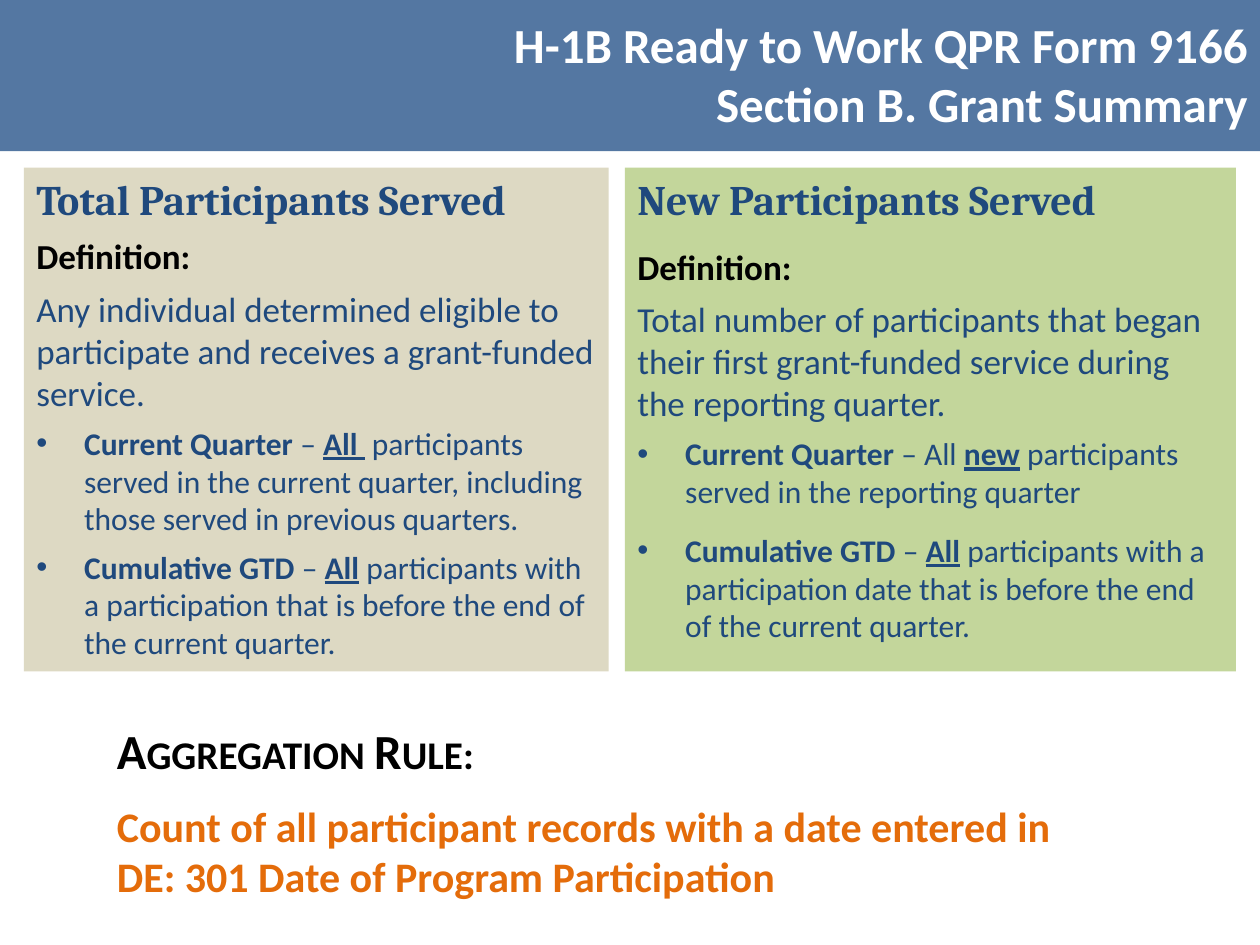
from lxml.etree import SubElement as Sub
from pptx import Presentation
from pptx.dml.color import RGBColor as Rgb
from pptx.enum.shapes import MSO_SHAPE as Shape
from pptx.enum.text import MSO_ANCHOR as Anchor, PP_ALIGN as Align
from pptx.oxml.ns import qn
from pptx.util import Inches, Pt

COLS, ROWS = 100, 75
HUES = {"band": "376092", "sand": "DDD9C3", "leaf": "C3D69B", "navy": "1F497D",
        "black": "000000", "white": "FFFFFF", "orange": "E46C0A"}
BASE = {"name": "Calibri", "bold": True}
STYLES = {
    "title": {**BASE, "size": 28, "hue": "white"},
    "head": {**BASE, "name": "Cambria", "size": 24, "hue": "navy"},
    "label": {**BASE, "size": 20, "hue": "black"},
    "body": {**BASE, "size": 20, "hue": "navy", "bold": False},
    "item": {**BASE, "size": 18, "hue": "navy", "bold": False},
    "term": {**BASE, "size": 18, "hue": "navy"},
    "stress": {**BASE, "size": 18, "hue": "navy", "underline": True},
    "rule": {**BASE, "size": 28, "hue": "black", "caps": "small"},
    "count": {**BASE, "size": 24, "hue": "orange"},
}


class Page:
    def __init__(self):
        self.deck = Presentation()
        self.deck.slide_width, self.deck.slide_height = Inches(10), Inches(7.5)
        self.slide = self.deck.slides.add_slide(self.deck.slide_layouts[6])

    def place(self, x, y, w, h):
        """Turn grid columns and rows into lengths."""
        dx, dy = self.deck.slide_width / COLS, self.deck.slide_height / ROWS
        return [round(n) for n in (x * dx, y * dy, w * dx, h * dy)]

    def block(self, box, hue, alpha=100):
        shape = self.slide.shapes.add_shape(Shape.RECTANGLE, *self.place(*box))
        shape.shadow.inherit = False
        shape.fill.solid()
        shape.fill.fore_color.rgb = Rgb.from_string(HUES[hue])
        shape.line.fill.background()
        if alpha < 100:
            tint = shape.fill._xPr.find(".//" + qn("a:srgbClr"))
            Sub(tint, qn("a:alpha"), val=str(alpha * 1000))
        return shape

    def text(self, box, paras, **kw):
        shape = self.slide.shapes.add_textbox(*self.place(*box))
        self.fill(shape.text_frame, paras, **kw)

    def panel(self, box, hue, paras):
        self.fill(self.block(box, hue).text_frame, paras)

    def fill(self, frame, paras, align=Align.LEFT, anchor=Anchor.TOP):
        frame.word_wrap = True
        frame.vertical_anchor = anchor
        for i, (runs, after) in enumerate(paras):
            para = frame.add_paragraph() if i else frame.paragraphs[0]
            if len(runs) > 1:
                self.bullet(para)
            para.alignment = align
            para.space_before = Pt(6 if i else 0)
            para.space_after = Pt(after)
            for style, words in runs:
                for j, line in enumerate(words.split("\n")):
                    if j:
                        para.add_line_break()
                    self.run(para, line, STYLES[style])

    def bullet(self, para):
        props = para._p.get_or_add_pPr()
        hang = Inches(0.38)
        props.set("marL", str(hang))
        props.set("indent", str(-hang))
        Sub(props, qn("a:buFont"), typeface="Arial")
        Sub(props, qn("a:buChar"), char="•")

    def run(self, para, words, style):
        run = para.add_run()
        run.text = words
        for key, value in style.items():
            if key == "hue":
                run.font.color.rgb = Rgb.from_string(HUES[value])
            elif key == "caps":
                run._r.get_or_add_rPr().set("cap", value)
            else:
                setattr(run.font, key, Pt(value) if key == "size" else value)


def line(style, words, after=0):
    return [(style, words)], after


def item(term, dash, stress, rest, after=0):
    return [("term", term), ("item", dash), ("stress", stress), ("item", rest)], after


def main():
    page = Page()

    # Header band and title
    page.block((0, 0, COLS, 12), "band", alpha=85)
    page.text((36.7, 0, 63.3, 11.7),
              [line("title", "H-1B Ready to Work QPR Form 9166\nSection B. Grant Summary")],
              align=Align.RIGHT, anchor=Anchor.MIDDLE)

    # Two definition panels
    top, high = 13.3, 40
    page.panel((1.9, top, 46.4, high), "sand", [
        line("head", "Total Participants Served"),
        line("label", "Definition:"),
        line("body", "Any individual determined eligible to participate and "
                     "receives a grant-funded service."),
        item("Current Quarter ", "– ", "All ", " participants served in the current "
             "quarter, including those served in previous quarters."),
        item("Cumulative GTD ", "– ", "All", " participants with a participation "
             "that is before the end of the current quarter."),
    ])
    page.panel((49.6, top, 48.5, high), "leaf", [
        line("head", "New Participants Served", 6),
        line("label", "Definition:"),
        line("body", "Total number of participants that began their first "
                     "grant-funded service during the reporting quarter."),
        item("Current Quarter ", "– All ", "new",
             " participants served in the reporting quarter", 6),
        item("Cumulative GTD ", "– ", "All", " participants with a participation "
             "date that is before the end of the current quarter.", 6),
    ])

    # Aggregation rule
    page.text((8.3, 56.7, 80, 15.5), [
        line("rule", "Aggregation Rule:", 6),
        line("count", "Count of all participant records with a date entered in "
                      "DE: 301 Date of Program Participation", 6),
    ])
    page.deck.save("out.pptx")


if __name__ == "__main__":
    main()
